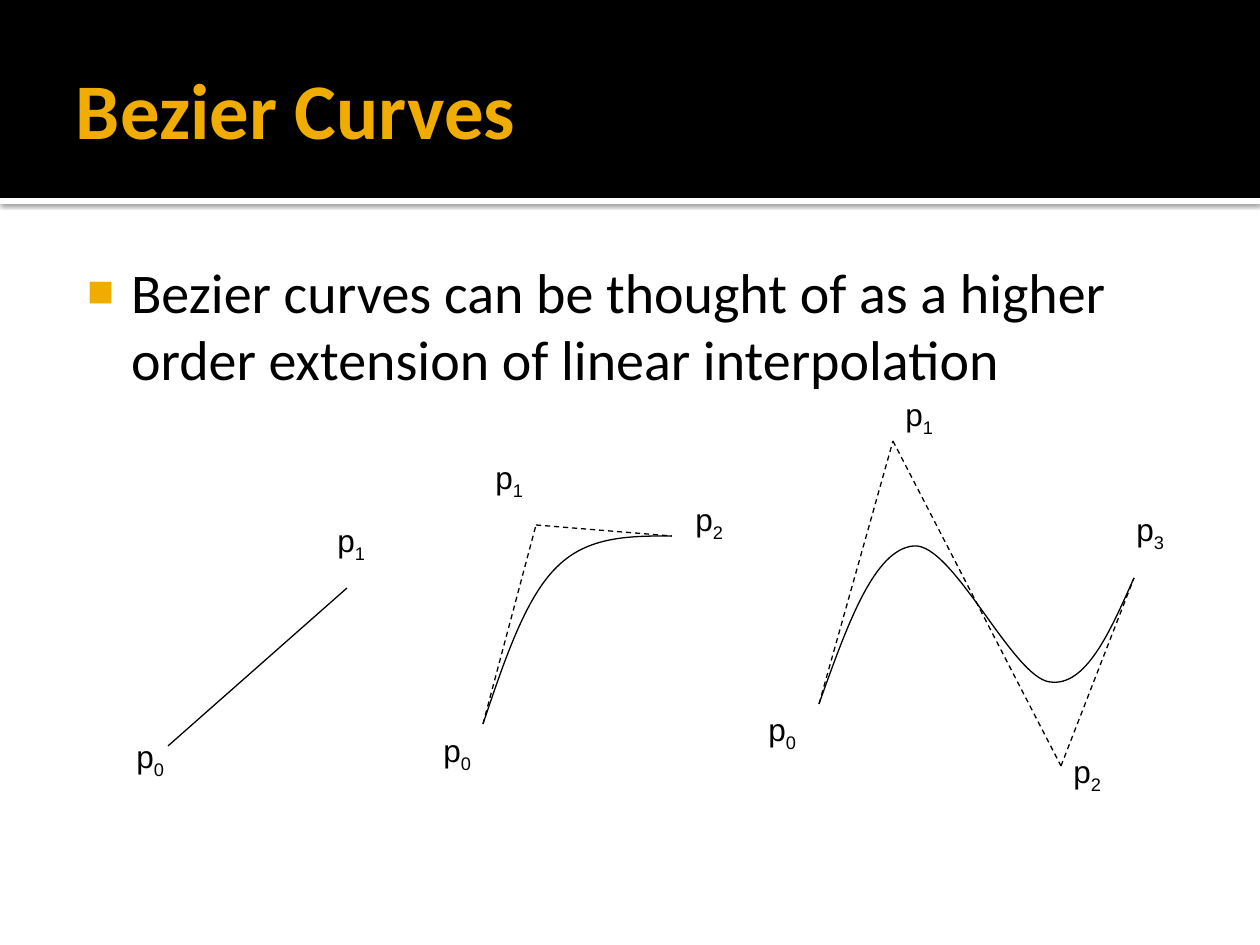
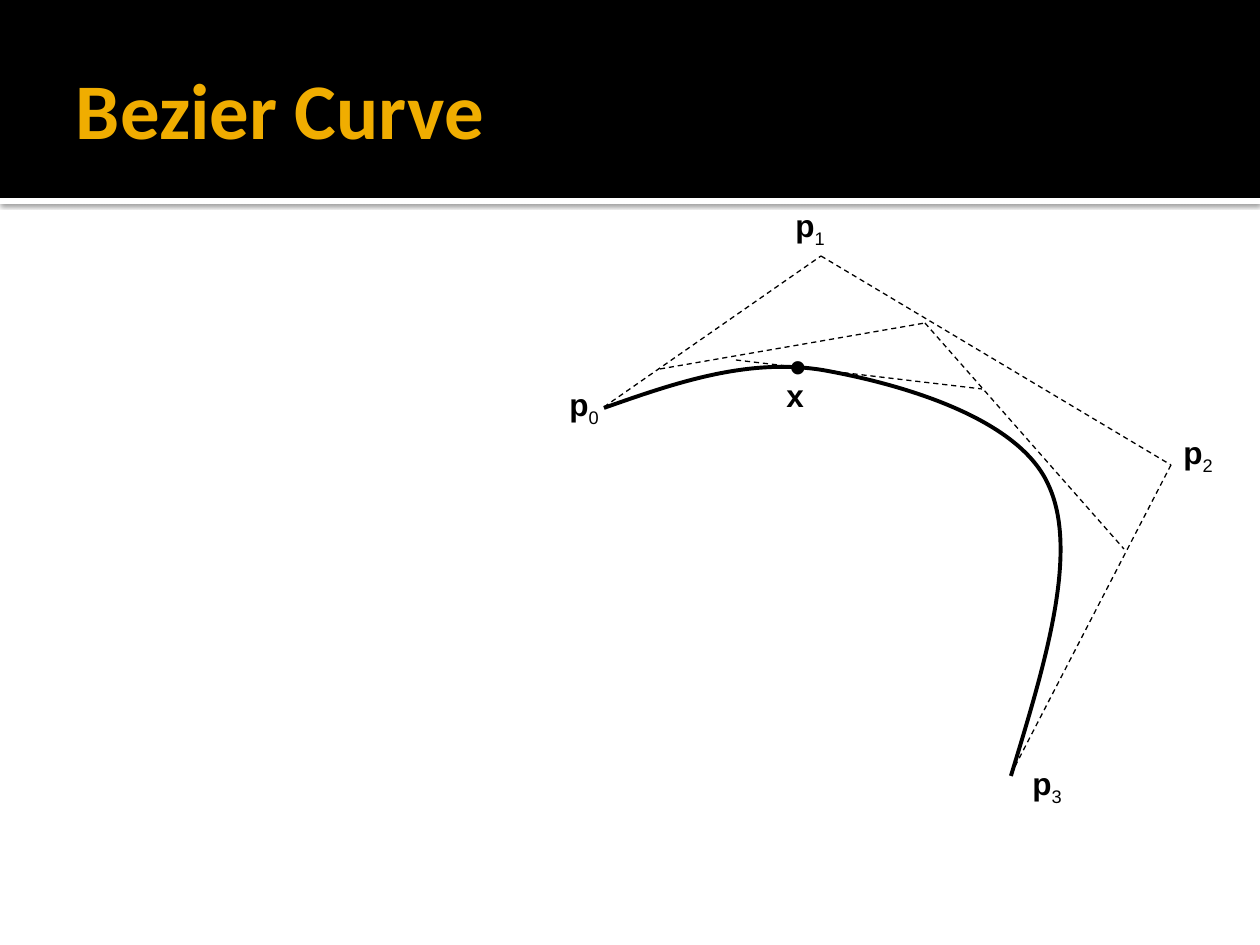
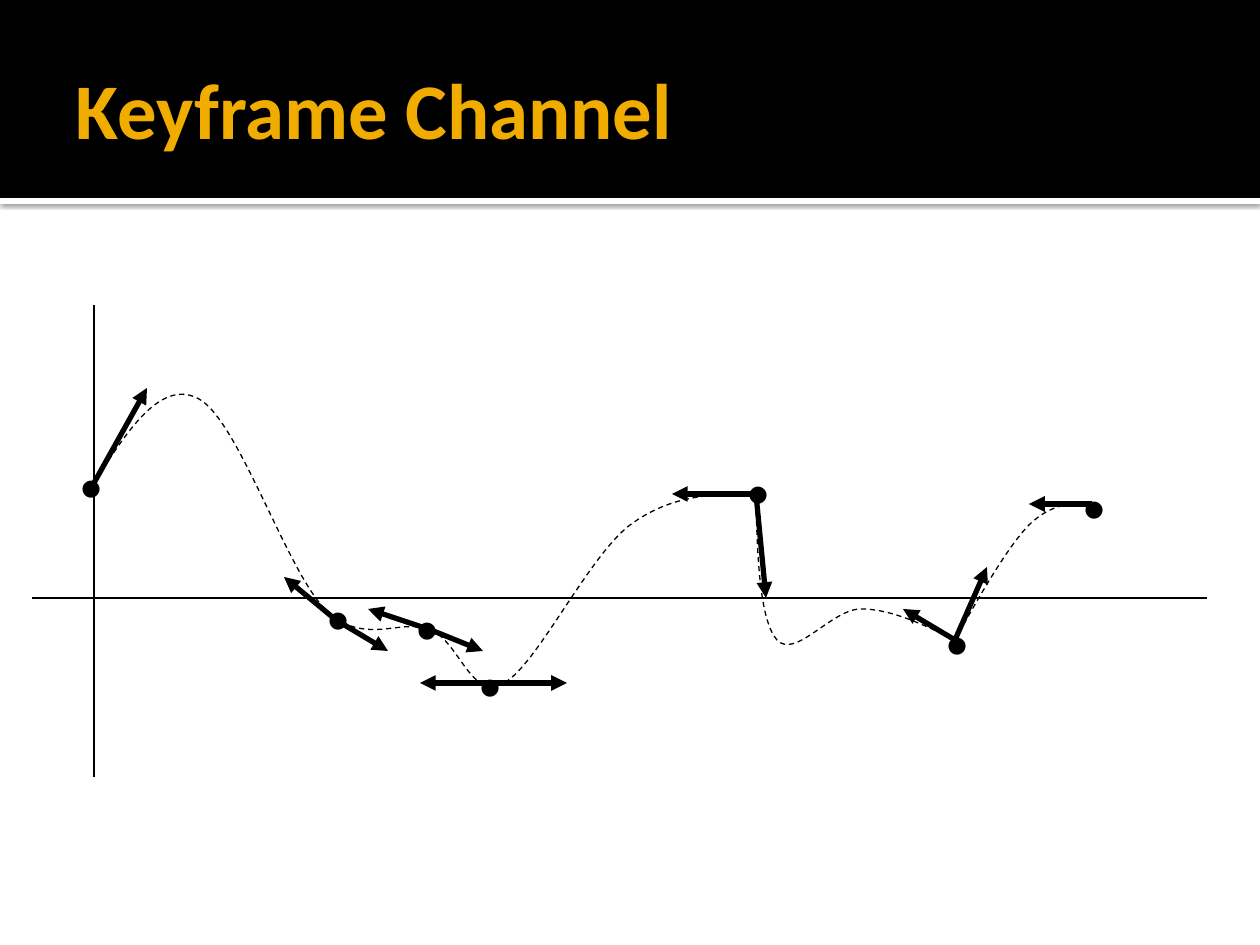
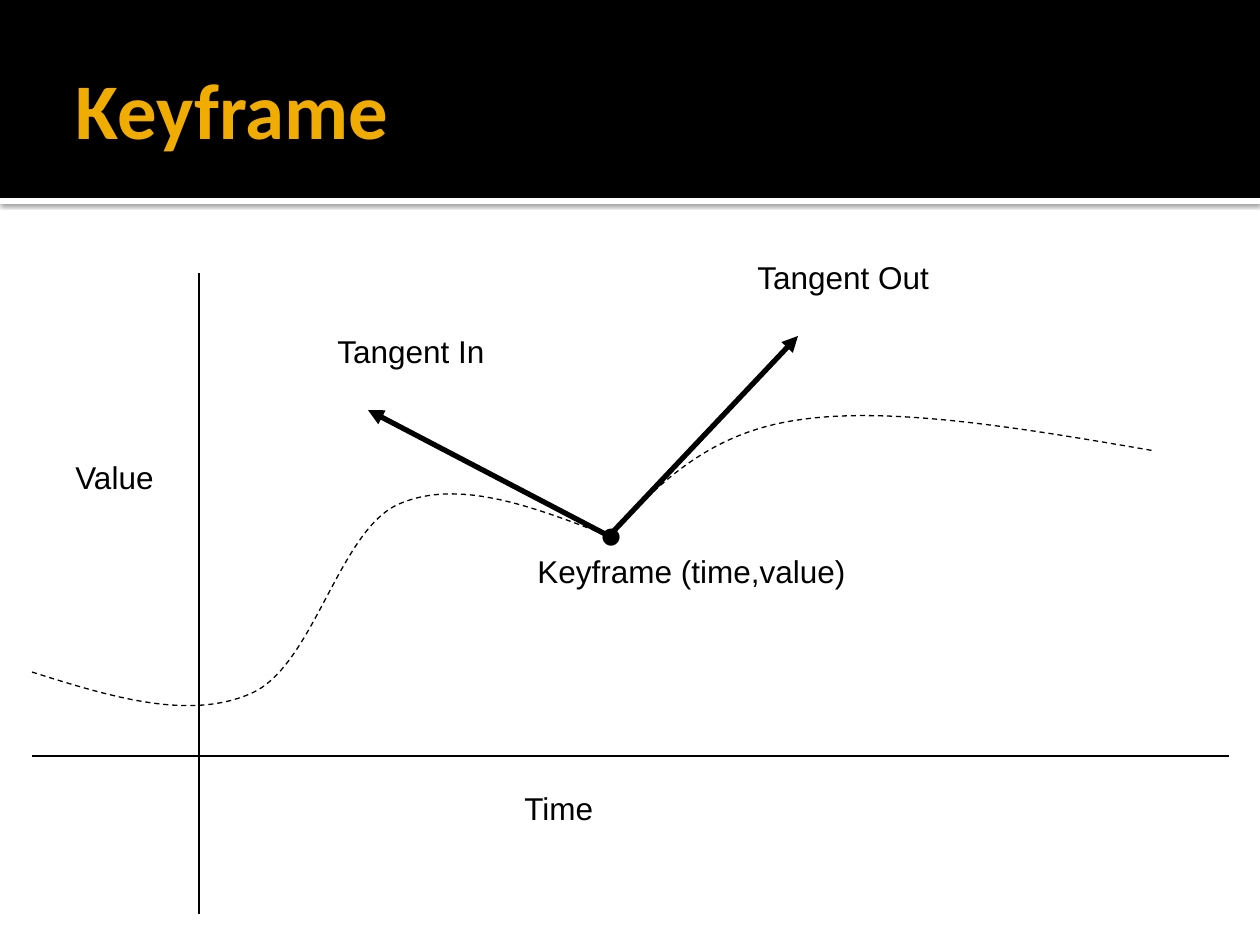
"""Build four slides on Bezier curves and keyframes."""
from dataclasses import dataclass

from lxml import etree
from pptx import Presentation
from pptx import util as u
from pptx.dml.color import RGBColor
from pptx.enum import dml, shapes, text
from pptx.oxml import ns

SCALE = 914400 / 126


@dataclass(frozen=True)
class Theme:
    """Colours, fonts, type sizes and line widths of the deck."""
    ink: RGBColor = RGBColor(0, 0, 0)
    paper: RGBColor = RGBColor(255, 255, 255)
    accent: RGBColor = RGBColor(0xF0, 0xAD, 0x00)
    heading_font: str = "Calibri"
    label_font: str = "Arial"
    title: int = 45
    body: int = 32
    label: int = 18
    dot: int = 36
    small_dot: int = 28
    thin: float = 0.75
    medium: float = 2.25
    thick: float = 3


T = Theme()


def px(n):
    """Turn pixels into EMU."""
    return u.Emu(round(n * SCALE))


def sub(parent, tag, **attrs):
    """Append a drawing element with attributes."""
    el = etree.SubElement(parent, ns.qn(tag))
    for name, value in attrs.items():
        el.set(name, str(value))
    return el


def write(p, words, size=T.label, font=T.label_font, color=T.ink, bold=False, subscript=False):
    """Add one formatted run to a paragraph."""
    r = p.add_run()
    r.text = words
    r.font.size = u.Pt(size)
    r.font.name = font
    r.font.color.rgb = color
    r.font.bold = bold
    if subscript:
        r._r.get_or_add_rPr().set("baseline", "-25000")


def place(sp, left, top, width, height):
    """Move and size a shape in pixels."""
    sp.left, sp.top, sp.width, sp.height = map(px, (left, top, width, height))


def prepare(sp, insets, anchor):
    """Set up a placeholder's frame and return its first paragraph."""
    tf = sp.text_frame
    tf.word_wrap = True
    tf.auto_size = text.MSO_AUTO_SIZE.NONE
    tf.vertical_anchor = anchor
    tf.margin_left, tf.margin_top, tf.margin_right, tf.margin_bottom = map(px, insets)
    p = tf.paragraphs[0]
    p.alignment = text.PP_ALIGN.LEFT
    p.space_before = u.Pt(0)
    return p


def add_titled_slide(prs, title, layout=5):
    """Add a slide with the deck's title style."""
    s = prs.slides.add_slide(prs.slide_layouts[layout])
    place(s.shapes.title, 63, 22, 1134, 173)
    p = prepare(s.shapes.title, (13, 6, 6, 6), text.MSO_ANCHOR.MIDDLE)
    write(p, title, size=T.title, font=T.heading_font, color=T.accent, bold=True)
    return s


def add_band(s, top, height, color):
    """Add a full-width band."""
    sp = s.shapes.add_shape(shapes.MSO_SHAPE.RECTANGLE, 0, px(top), px(1260), px(height))
    sp.shadow.inherit = False
    sp.fill.solid()
    sp.fill.fore_color.rgb = color
    sp.line.fill.background()
    return sp


def move_bands_to_master(prs, s):
    """Draw the header bands and put them behind everything on the master."""
    edge = add_band(s, 198, 6, T.paper)
    effects = edge.element.spPr.find(ns.qn("a:effectLst"))
    shadow = sub(effects, "a:outerShdw", blurRad=u.Pt(2.5), dist=u.Pt(0.8),
                 dir=5400000, algn="t", rotWithShape=0)
    sub(sub(shadow, "a:srgbClr", val=T.ink), "a:alpha", val=60000)
    header = add_band(s, 0, 198, T.ink)
    for i, sp in enumerate((edge, header)):
        prs.slide_master.shapes.element.insert(2 + i, sp.element)


def add_bullet(s, words):
    """Fill the body placeholder with one square-bulleted paragraph."""
    sp = s.placeholders[1]
    place(sp, 63, 244, 1134, 638)
    p = prepare(sp, (8, 13, 13, 6), text.MSO_ANCHOR.TOP)
    write(p, words, size=T.body, font=T.heading_font)
    pPr = p._p.get_or_add_pPr()
    pPr.set("marL", str(px(60)))
    pPr.set("indent", str(px(-44)))
    sub(sub(pPr, "a:buClr"), "a:srgbClr", val=T.accent)
    sub(pPr, "a:buSzPct", val=80000)
    sub(pPr, "a:buFont", typeface=T.label_font)
    sub(pPr, "a:buChar", char="■")


def style_line(sp, width, dashed):
    """Give a shape's line the ink colour, a width and a dash."""
    sp.line.color.rgb = T.ink
    sp.line.width = u.Pt(width)
    if dashed:
        sp.line.dash_style = dml.MSO_LINE.DASH


def add_line(s, start, end, width=T.thin, dashed=False, arrow=False):
    """Add a straight line, with an arrowhead at its end if asked."""
    c = s.shapes.add_connector(shapes.MSO_CONNECTOR.STRAIGHT, *map(px, (*start, *end)))
    style_line(c, width, dashed)
    if arrow:
        sub(c.line._get_or_add_ln(), "a:tailEnd", type="triangle")
    sub(c.element.spPr, "a:effectLst")


def add_dashed_path(s, *points):
    """Join points with dashed lines."""
    for start, end in zip(points, points[1:]):
        add_line(s, start, end, dashed=True)


def add_tangents(s, start, *ends):
    """Add thick arrows from one point."""
    for end in ends:
        add_line(s, start, end, width=T.thick, arrow=True)


def bend(sp):
    """Turn each three line segments of a freeform into one cubic curve."""
    outline = next(sp.element.iter(ns.qn("a:path")))
    segments = outline.findall(ns.qn("a:lnTo"))
    for i in range(0, len(segments), 3):
        cubic = sub(outline, "a:cubicBezTo")
        for segment in segments[i:i + 3]:
            cubic.append(segment[0])
            outline.remove(segment)


def add_curve(s, *points, width=T.thin, dashed=False):
    """Draw chained cubic curves: a start, then three points for each."""
    start, *rest = [tuple(map(px, point)) for point in points]
    fb = s.shapes.build_freeform(*start)
    fb.add_line_segments(rest, close=False)
    sp = fb.convert_to_shape()
    bend(sp)
    sp.shadow.inherit = False
    sp.fill.background()
    style_line(sp, width, dashed)


def add_label(s, words, left, top, width, height=63, index="", **fmt):
    """Add an unwrapped label with an optional subscript."""
    tf = s.shapes.add_textbox(*map(px, (left, top, width, height))).text_frame
    tf.word_wrap = False
    tf.auto_size = text.MSO_AUTO_SIZE.SHAPE_TO_FIT_TEXT
    p = tf.paragraphs[0]
    write(p, words, **fmt)
    if index:
        write(p, index, subscript=True)


def add_dot(s, left, top):
    """Mark a keyframe."""
    add_label(s, "•", left, top, 48, 88, size=T.dot)


def add_points(s, labels, width, bold=False):
    """Label control points given as (index, left, top)."""
    for index, left, top in labels:
        add_label(s, "p", left, top, width, index=str(index), bold=bold)


def build_curves(prs):
    """Linear, quadratic and cubic curves side by side."""
    s = add_titled_slide(prs, "Bezier Curves", layout=1)
    move_bands_to_master(prs, s)
    add_bullet(s, "Bezier curves can be thought of as a higher order extension "
                  "of linear interpolation")
    add_line(s, (168, 746), (347, 588))
    add_curve(s, (483, 724), (504, 662), (525, 598), (557, 567),
              (588, 536), (630, 536), (672, 536))
    add_curve(s, (819, 704), (847, 626), (874, 549), (914, 546),
              (953, 543), (1013, 678), (1050, 682), (1086, 687), (1110, 632), (1134, 578))
    add_dashed_path(s, (483, 724), (536, 525), (672, 536))
    add_dashed_path(s, (819, 704), (893, 441), (1061, 766), (1134, 578))
    add_points(s, [(0, 124, 731), (1, 325, 515),
                   (0, 431, 725), (1, 483, 452), (2, 683, 494),
                   (0, 756, 704), (1, 893, 389), (2, 1061, 746), (3, 1124, 504)], 60)


def build_construction(prs):
    """A cubic curve with the nested lines that find a point on it."""
    s = add_titled_slide(prs, "Bezier Curve")
    add_dashed_path(s, (604, 407), (821, 256), (1171, 465), (1010, 776))
    add_dashed_path(s, (660, 369), (925, 323), (1124, 549))
    add_dashed_path(s, (736, 360), (982, 389))
    add_curve(s, (604, 408), (675, 383), (747, 358), (822, 370),
              (896, 383), (1017, 416), (1048, 484), (1080, 551), (1045, 664), (1011, 776),
              width=T.medium)
    add_label(s, "x", 774, 370, 47, bold=True)
    add_label(s, "•", 777, 329, 43, 72, size=T.small_dot)
    add_points(s, [(0, 557, 379), (1, 783, 200), (2, 1171, 427), (3, 1020, 758)], 63, bold=True)


def build_channel(prs):
    """A channel of keyframes with their tangents."""
    s = add_titled_slide(prs, "Keyframe Channel")
    add_curve(s, (94, 483), (127, 431), (161, 378), (199, 399),
              (238, 420), (287, 571), (325, 609), (364, 648), (401, 617), (431, 630),
              (460, 643), (471, 701), (504, 683), (537, 665), (588, 557), (630, 525),
              (672, 494), (714, 494), (756, 494), dashed=True)
    add_curve(s, (756, 494), (757, 557), (760, 621), (777, 640),
              (795, 660), (832, 609), (861, 609), (891, 609), (924, 625), (955, 640), dashed=True)
    add_curve(s, (955, 640), (980, 595), (1007, 548), (1029, 525),
              (1052, 503), (1072, 503), (1092, 504), dashed=True)
    add_line(s, (32, 598), (1207, 598))
    add_line(s, (94, 305), (94, 777))
    keyframes = [
        ((68, 441), (94, 483), (147, 388)),
        ((315, 573), (336, 620), (284, 577), (388, 651)),
        ((404, 583), (431, 630), (368, 609), (483, 651)),
        ((467, 640), (494, 683), (420, 683), (567, 683)),
        ((735, 447), (756, 494), (672, 494), (766, 598)),
        ((934, 598), (955, 640), (987, 567), (903, 609)),
        ((1071, 462), (1092, 504), (1029, 504)),
    ]
    for dot, *tangents in keyframes:
        add_tangents(s, *tangents)
        add_dot(s, *dot)


def build_keyframe(prs):
    """One keyframe with its incoming and outgoing tangents."""
    s = add_titled_slide(prs, "Keyframe")
    add_curve(s, (609, 536), (658, 485), (707, 433), (798, 420),
              (890, 406), (1022, 428), (1155, 451), dashed=True)
    add_tangents(s, (609, 536), (798, 336), (368, 410))
    add_curve(s, (32, 672), (111, 697), (190, 721), (252, 693),
              (314, 665), (339, 530), (399, 504), (459, 478), (534, 507), (609, 536), dashed=True)
    add_line(s, (32, 756), (1229, 756))
    add_line(s, (199, 273), (199, 914))
    for label in [("Time", 512, 783, 113), ("Value", 63, 452, 126),
                  ("Tangent In", 325, 326, 208), ("Tangent Out", 745, 252, 237),
                  ("Keyframe (time,value)", 525, 546, 407)]:
        add_label(s, *label)
    add_dot(s, 588, 489)


def main():
    """Build and save the deck."""
    prs = Presentation()
    prs.slide_width, prs.slide_height = px(1260), px(945)
    for build in (build_curves, build_construction, build_channel, build_keyframe):
        build(prs)
    prs.save("out.pptx")


if __name__ == "__main__":
    main()
